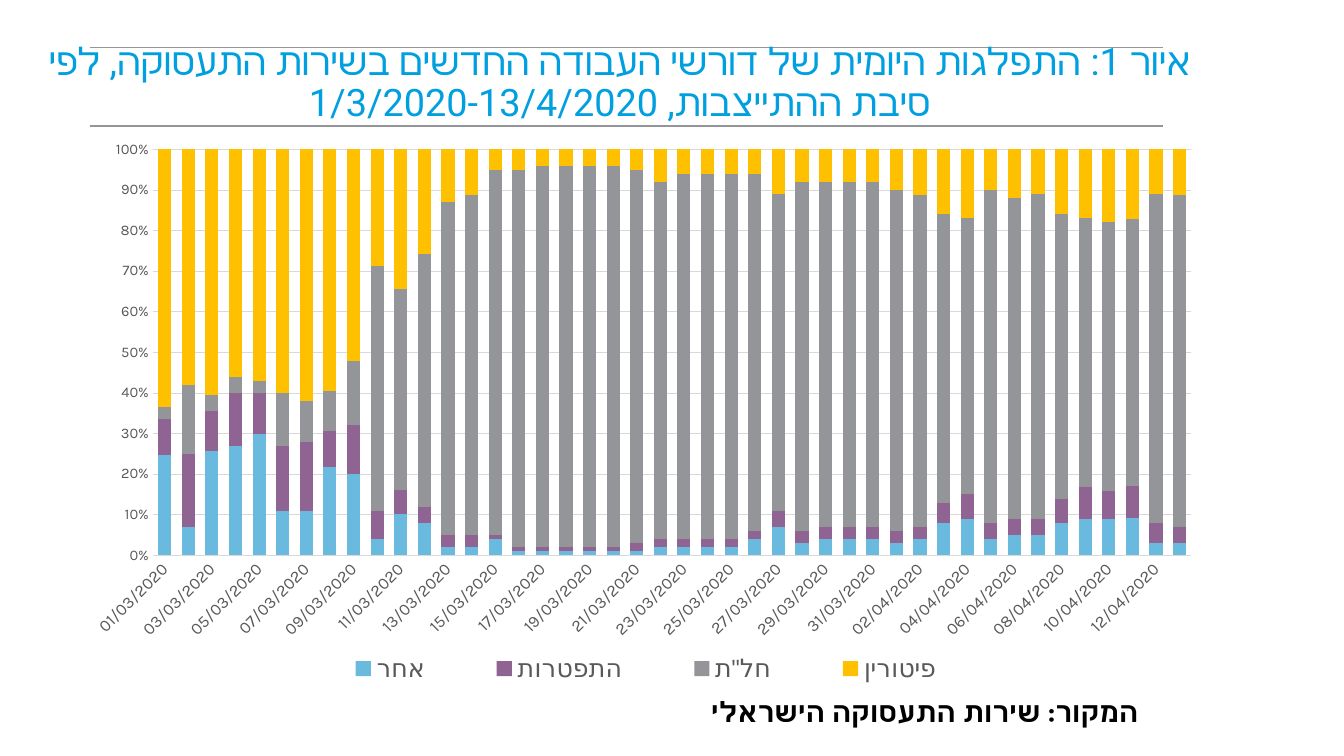
from lxml import etree
from pptx import Presentation
from pptx.chart.data import CategoryChartData
from pptx.dml.color import RGBColor
from pptx.enum.chart import XL_CHART_TYPE, XL_LEGEND_POSITION, XL_TICK_MARK
from pptx.enum.shapes import MSO_CONNECTOR
from pptx.enum.text import MSO_ANCHOR, MSO_AUTO_SIZE, PP_ALIGN
from pptx.oxml.ns import qn
from pptx.util import Inches, Pt

COLORS = {
    "title": "009FDF", "rule": "939598", "grid": "D9D9D9", "label": "595959",
    "black": "000000", "other": "69BADE", "resigned": "906492",
    "unpaid_leave": "939598", "dismissed": "FFC000",
}
DATES = [f"{day:02}/{month:02}/2020"
         for month, last_day in ((3, 31), (4, 13))
         for day in range(1, last_day + 1)]
REASONS = [
    ("אחר", "other",
     [25, 7, 26, 27, 30, 11, 11, 22, 20, 4, 10, 8, 2, 2, 4, 1, 1, 1, 1, 1, 1, 2,
      2, 2, 2, 4, 7, 3, 4, 4, 4, 3, 4, 8, 9, 4, 5, 5, 8, 9, 9, 9, 3, 3]),
    ("התפטרות", "resigned",
     [9, 18, 10, 13, 10, 16, 17, 9, 12, 7, 6, 4, 3, 3, 1, 1, 1, 1, 1, 1, 2, 2,
      2, 2, 2, 2, 4, 3, 3, 3, 3, 3, 3, 5, 6, 4, 4, 4, 6, 8, 7, 8, 5, 4]),
    ('חל"ת', "unpaid_leave",
     [3, 17, 4, 4, 3, 13, 10, 10, 16, 61, 49, 63, 82, 83, 91, 93, 94, 94, 94, 94, 92, 88,
      91, 90, 90, 89, 78, 87, 86, 86, 85, 85, 81, 71, 68, 82, 79, 80, 70, 67, 67, 65, 81, 81]),
    ("פיטורין", "dismissed",
     [64, 58, 61, 56, 57, 60, 62, 60, 52, 29, 34, 26, 13, 11, 5, 5, 4, 4, 4, 4, 5, 8,
      6, 6, 6, 6, 11, 8, 8, 8, 8, 10, 11, 16, 17, 10, 12, 11, 16, 17, 18, 17, 11, 11]),
]


def rgb(name):
    return RGBColor.from_string(COLORS[name])


def format_font(font, name, size, color, bold=False):
    """Set the font for Latin and for Hebrew letters."""
    font.name, font.size, font.bold = name, Pt(size), bold
    font.color.rgb = rgb(color)
    etree.SubElement(font._rPr, qn("a:cs")).set("typeface", name)


def write_hebrew(shape, text, *, font, size, color, align, bold=False,
                 anchor=MSO_ANCHOR.TOP, line_spacing=None):
    """Fill a shape with one right-to-left paragraph."""
    frame = shape.text_frame
    frame.word_wrap = True
    frame.auto_size = MSO_AUTO_SIZE.NONE
    frame.vertical_anchor = anchor
    paragraph = frame.paragraphs[0]
    paragraph.alignment = align
    paragraph.line_spacing = line_spacing
    paragraph._p.get_or_add_pPr().set("rtl", "1")
    run = paragraph.add_run()
    run.text = text
    format_font(run.font, font, size, color, bold)


def place(shape, left, top, width, height):
    shape.left, shape.top = Inches(left), Inches(top)
    shape.width, shape.height = Inches(width), Inches(height)


def add_rule(slide, top):
    line = slide.shapes.add_connector(
        MSO_CONNECTOR.STRAIGHT, Inches(0.89), Inches(top), Inches(11.53), Inches(top))
    line.line.color.rgb = rgb("rule")
    line.line.width = Pt(0.75)
    etree.SubElement(line._element.spPr, qn("a:effectLst"))


def make_layout(left, top, width, height, inner=False):
    """Return a manual chart layout in fractions of the chart area."""
    layout = etree.Element(qn("c:layout"))
    manual = etree.SubElement(layout, qn("c:manualLayout"))
    settings = [("layoutTarget", "inner")] if inner else []
    settings += [("xMode", "edge"), ("yMode", "edge"),
                 ("x", left), ("y", top), ("w", width), ("h", height)]
    for tag, value in settings:
        etree.SubElement(manual, qn(f"c:{tag}")).set("val", str(value))
    return layout


def format_axes(chart):
    dates, shares = chart.category_axis, chart.value_axis
    for axis, size in ((dates, 12), (shares, 10.5)):
        axis.major_tick_mark = axis.minor_tick_mark = XL_TICK_MARK.NONE
        format_font(axis.tick_labels.font, "Karla", size, "label")
    for line in (dates.format.line, shares.major_gridlines.format.line):
        line.color.rgb = rgb("grid")
        line.width = Pt(0.75)
    dates._element.txPr.find(qn("a:bodyPr")).set("rot", "-2700000")
    skip = etree.Element(qn("c:tickLblSkip"))
    skip.set("val", "2")
    dates._element.find(qn("c:noMultiLvlLbl")).addprevious(skip)
    shares.format.line.fill.background()
    shares.minimum_scale, shares.maximum_scale, shares.major_unit = 0, 1, 0.1
    shares.tick_labels.number_format = "0%"
    shares.tick_labels.number_format_is_linked = False


def add_reasons_chart(slide):
    data = CategoryChartData()
    data.categories = DATES
    for name, _, values in REASONS:
        data.add_series(name, values)
    chart = slide.shapes.add_chart(
        XL_CHART_TYPE.COLUMN_STACKED_100, Inches(0.86), Inches(0.96),
        Inches(11.32), Inches(5.88), data).chart
    chart.has_title = False
    format_font(chart.font, "Karla", 10.5, "black")
    format_axes(chart)

    plot = chart.plots[0]
    plot.gap_width, plot.overlap, plot.vary_by_categories = 80, 100, False
    for series, (_, color, _) in zip(plot.series, REASONS):
        series.format.fill.solid()
        series.format.fill.fore_color.rgb = rgb(color)
    plot_area = chart._chartSpace.chart.plotArea
    for layout in plot_area.findall(qn("c:layout")):
        plot_area.remove(layout)
    plot_area.insert(0, make_layout(0.058, 0.089, 0.91, 0.685, inner=True))

    chart.has_legend = True
    legend = chart.legend
    legend.position = XL_LEGEND_POSITION.TOP
    legend.include_in_layout = False
    format_font(legend.font, "Karla", 18, "label")
    for layout in legend._element.findall(qn("c:layout")):
        legend._element.remove(layout)
    legend._element.find(qn("c:legendPos")).addnext(make_layout(0.18, 0.93, 0.62, 0.07))


def main():
    presentation = Presentation()
    presentation.slide_width, presentation.slide_height = Inches(13.33), Inches(7.5)
    slide = presentation.slides.add_slide(presentation.slide_layouts[5])

    for top in (0.47, 1.25):
        add_rule(slide, top)

    title = slide.shapes.title
    slide.shapes._spTree.append(title._element)
    place(title, 0.29, 0.44, 11.71, 0.78)
    write_hebrew(
        title,
        "איור 1: התפלגות היומית של דורשי העבודה החדשים בשירות התעסוקה, "
        "לפי סיבת ההתייצבות, 1/3/2020-13/4/2020",
        font="Roboto", size=27, color="title", align=PP_ALIGN.CENTER,
        anchor=MSO_ANCHOR.MIDDLE, line_spacing=0.9)

    add_reasons_chart(slide)

    source = slide.shapes.add_textbox(Inches(1), Inches(6.84), Inches(10.39), Inches(0.44))
    write_hebrew(source, "המקור: שירות התעסוקה הישראלי", font="Karla", size=20,
                 color="black", align=PP_ALIGN.RIGHT, bold=True)

    presentation.save("out.pptx")


if __name__ == "__main__":
    main()
